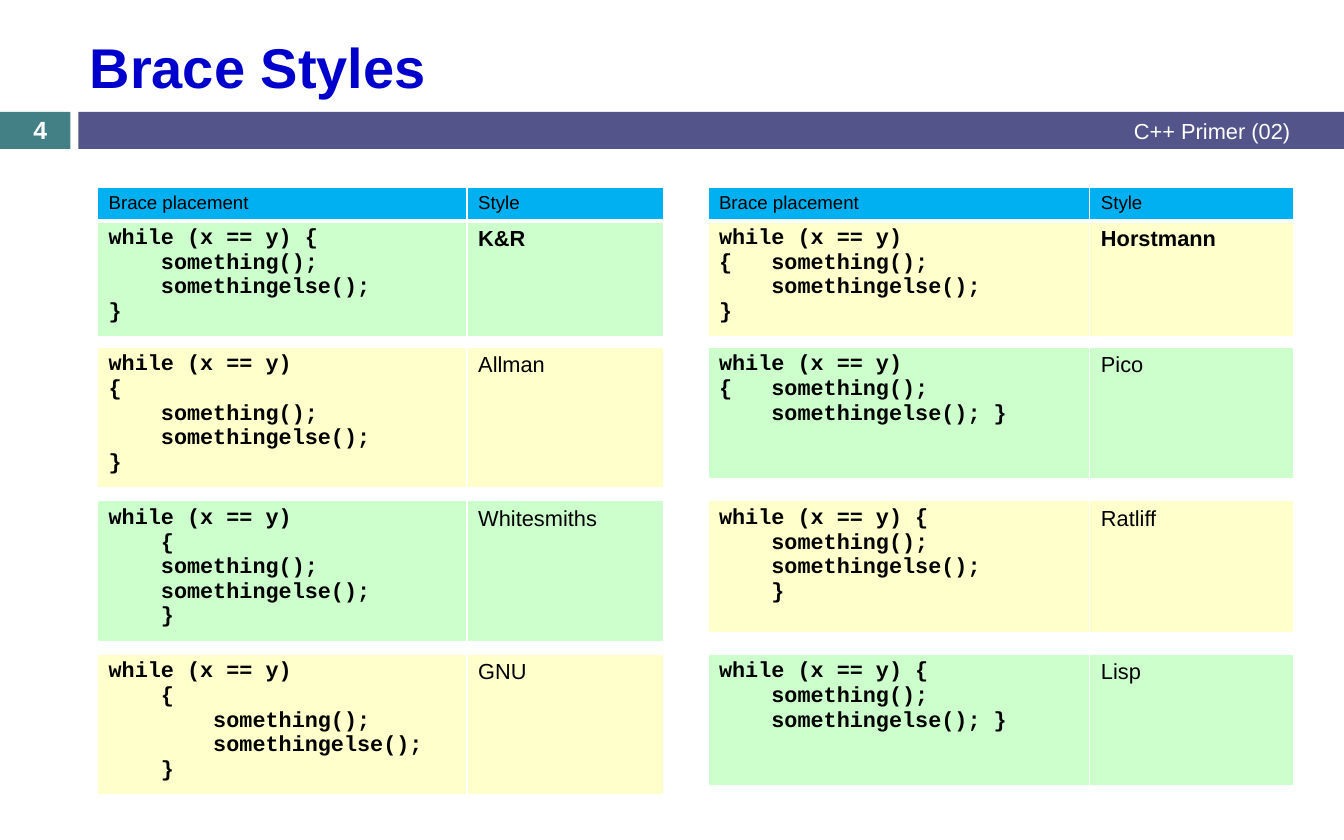
from dataclasses import dataclass

from lxml.etree import SubElement
from pptx import Presentation
from pptx.dml.color import RGBColor
from pptx.enum.shapes import MSO_SHAPE as Shape
from pptx.enum.text import MSO_ANCHOR as Anchor, PP_ALIGN as Align
from pptx.oxml.ns import qn
from pptx.util import Inches, Pt

COLORS = {
    "title": "0000CC",
    "teal": "438086",
    "indigo": "53548A",
    "header": "00B0F0",
    "green": "CCFFCC",
    "yellow": "FFFFCC",
    "white": "FFFFFF",
    "black": "000000",
}
FIRST_TOP, SECOND_TOP, ROW_PITCH = 1.67, 3.1, 1.37
HEADER_HEIGHT, FIRST_HEIGHT, BODY_HEIGHT = 0.28, 0.98, 1.19


@dataclass
class Column:
    left: float
    widths: tuple[float, float]
    fills: tuple[str, str]


@dataclass
class BraceStyle:
    name: str
    code: str


@dataclass
class TextLook:
    size: int
    color: str = "black"
    font: str = "Arial"
    bold: bool = False
    align: Align = Align.LEFT


COLUMNS = [
    Column(0.87, (3.3, 1.76), ("green", "yellow")),
    Column(6.32, (3.41, 1.82), ("yellow", "green")),
]
STYLES = [
    [
        BraceStyle("K&R", "while (x == y) {\n    something();\n    somethingelse();\n}"),
        BraceStyle("Allman", "while (x == y)\n{\n    something();\n    somethingelse();\n}"),
        BraceStyle("Whitesmiths", "while (x == y)\n    {\n    something();\n    somethingelse();\n    }"),
        BraceStyle("GNU", "while (x == y)\n    {\n        something();\n        somethingelse();\n    }"),
    ],
    [
        BraceStyle("Horstmann", "while (x == y)\n{   something();\n    somethingelse();\n}"),
        BraceStyle("Pico", "while (x == y)\n{   something();\n    somethingelse(); }"),
        BraceStyle("Ratliff", "while (x == y) {\n    something();\n    somethingelse();\n    }"),
        BraceStyle("Lisp", "while (x == y) {\n    something();\n    somethingelse(); }"),
    ],
]
HEADER_LOOK = TextLook(12)
CODE_LOOK = TextLook(14, font="Courier New", bold=True)


def rgb(name: str) -> RGBColor:
    return RGBColor.from_string(COLORS[name])


def write(frame, text: str, look: TextLook) -> None:
    frame.text = text
    for para in frame.paragraphs:
        para.alignment = look.align
        for span in para.runs:
            span.font.name = look.font
            span.font.size = Pt(look.size)
            span.font.bold = look.bold
            span.font.color.rgb = rgb(look.color)


def place(shape, left: float, top: float, width: float, height: float) -> None:
    shape.left, shape.top = Inches(left), Inches(top)
    shape.width, shape.height = Inches(width), Inches(height)


def add_bar(page, left: float, width: float, color: str) -> None:
    bar = page.shapes.add_shape(Shape.RECTANGLE, Inches(left), Inches(1), Inches(width), Inches(0.33))
    bar.shadow.inherit = False
    bar.fill.solid()
    bar.fill.fore_color.rgb = rgb(color)
    bar.line.fill.background()


def add_label(page, bounds: tuple, text: str, look: TextLook) -> None:
    box = page.shapes.add_textbox(*map(Inches, bounds))
    frame = box.text_frame
    frame.word_wrap = True
    frame.vertical_anchor = Anchor.MIDDLE
    frame.margin_top = frame.margin_bottom = 0
    write(frame, text, look)


def fill_cell(cell, text: str, look: TextLook, fill: str, bottom_width: int) -> None:
    write(cell.text_frame, text, look)
    properties = cell._tc.get_or_add_tcPr()
    for side in ("lnL", "lnR", "lnT", "lnB"):
        width = bottom_width if side == "lnB" else 1
        line = SubElement(properties, qn(f"a:{side}"), w=str(Pt(width)))
        solid = SubElement(line, qn("a:solidFill"))
        SubElement(solid, qn("a:srgbClr"), val=COLORS["white"])
    cell.fill.solid()
    cell.fill.fore_color.rgb = rgb(fill)


def add_style_table(page, column: Column, index: int, style: BraceStyle) -> None:
    first = index == 0
    fill = column.fills[index % 2]
    name_look = TextLook(14, bold=first)
    rows = [(style.code, style.name, CODE_LOOK, name_look, fill)]
    heights = [FIRST_HEIGHT if first else BODY_HEIGHT]
    top = FIRST_TOP if first else SECOND_TOP + (index - 1) * ROW_PITCH
    if first:
        rows.insert(0, ("Brace placement", "Style", HEADER_LOOK, HEADER_LOOK, "header"))
        heights.insert(0, HEADER_HEIGHT)
    frame = page.shapes.add_table(
        len(rows), 2, Inches(column.left), Inches(top), Inches(sum(column.widths)), Inches(sum(heights))
    )
    table = frame.table
    table.first_row = table.horz_banding = False
    for table_column, width in zip(table.columns, column.widths):
        table_column.width = Inches(width)
    for number, (left_text, right_text, left_look, right_look, color) in enumerate(rows):
        table.rows[number].height = Inches(heights[number])
        bottom_width = 1 if first and number == 1 else 3
        fill_cell(table.cell(number, 0), left_text, left_look, color, bottom_width)
        fill_cell(table.cell(number, 1), right_text, right_look, color, bottom_width)


def main() -> None:
    deck = Presentation()
    deck.slide_width, deck.slide_height = Inches(12), Inches(7.5)
    page = deck.slides.add_slide(deck.slide_layouts[5])

    title = page.shapes.title
    place(title, 0.7, 0.19, 10.91, 0.8)
    title.text_frame.vertical_anchor = Anchor.MIDDLE
    write(title.text_frame, "Brace Styles", TextLook(36, "title", bold=True))

    add_bar(page, 0, 0.63, "teal")
    add_bar(page, 0.7, 11.3, "indigo")
    add_label(page, (6.17, 1, 5.45, 0.33), "C++ Primer (02)", TextLook(14, "white", align=Align.RIGHT))
    add_label(page, (0, 1.01, 0.72, 0.3), "4", TextLook(16, "white", bold=True, align=Align.CENTER))

    for column, styles in zip(COLUMNS, STYLES):
        for index, style in enumerate(styles):
            add_style_table(page, column, index, style)

    deck.save("out.pptx")


if __name__ == "__main__":
    main()
